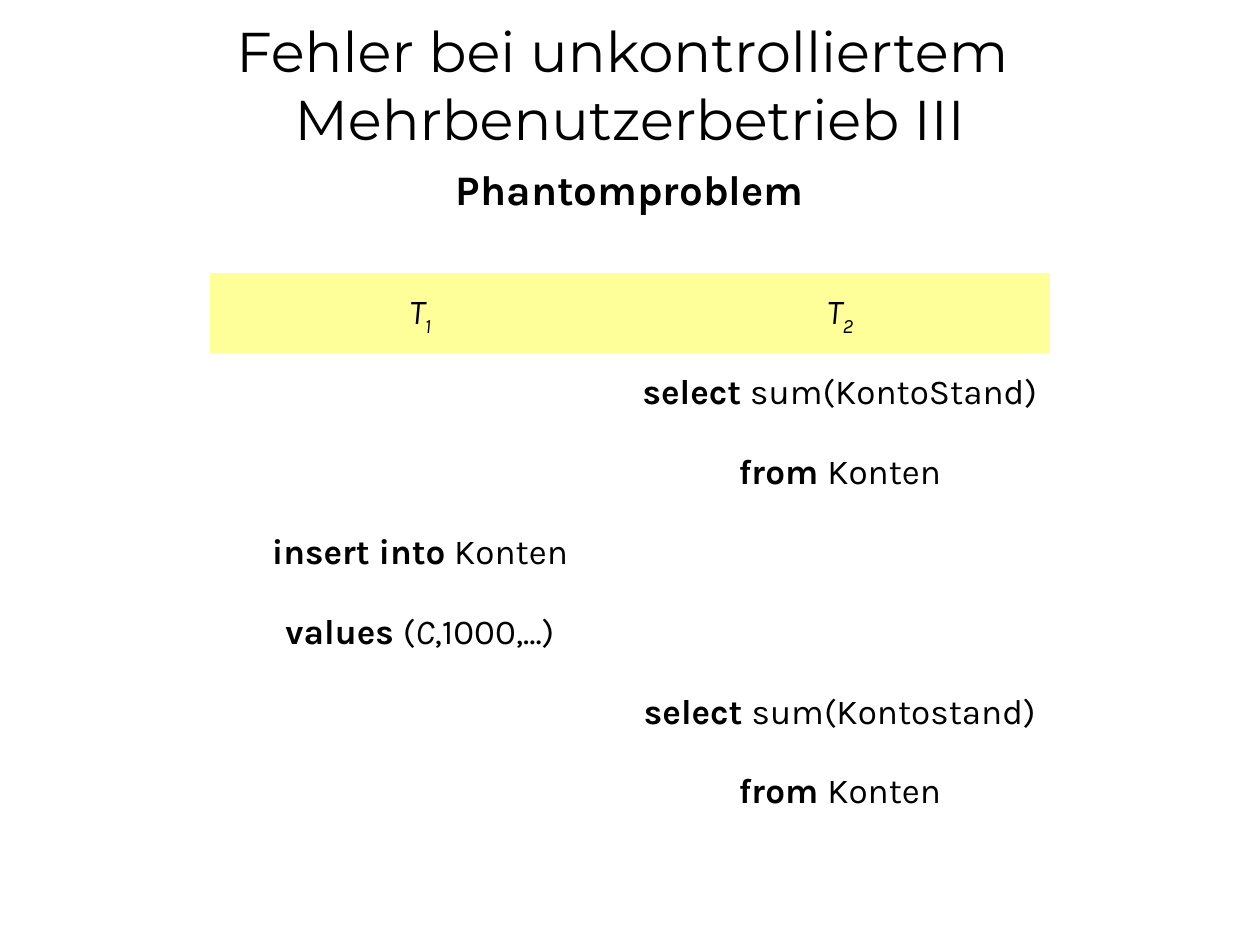
import pptx
import pptx.util
import pptx.dml.color
import pptx.enum.text
import pptx.oxml.ns

WIDE, HIGH = 10, 7.5
TITLE = ["Fehler bei unkontrolliertem ", "Mehrbenutzerbetrieb III"]
HEAD = "Phantomproblem"
# Each cell is a list of (text, style): b bold, i italic, s subscript
ROWS = [
    ([("T", "i"), ("1", "is")], [("T", "i"), ("2", "is")]),
    ([], [("select ", "b"), ("sum(KontoStand)", "")]),
    ([], [("from ", "b"), ("Konten", "")]),
    ([("insert into", "b"), (" Konten", "")], []),
    ([("values ", "b"), ("(", ""), ("C", "i"), (",1000,...)", "")], []),
    ([], [("select ", "b"), ("sum(Kontostand)", "")]),
    ([], [("from ", "b"), ("Konten", "")]),
]
INK, YELLOW = "000000", "FFFF99"
PLAIN = "{2D5ABB26-0587-4C30-8999-92F81FD0307C}"  # table style without grid

inch = pptx.util.Inches
anchor = pptx.enum.text.MSO_ANCHOR


def color(code):
    return pptx.dml.color.RGBColor.from_string(code)


def add_run(para, text, size, style="", font="Karla"):
    run = para.add_run()
    run.text = text
    face = run.font
    face.name, face.size = font, pptx.util.Pt(size)
    face.bold, face.italic = "b" in style, "i" in style
    face.color.rgb = color(INK)
    if "s" in style:
        run._r.get_or_add_rPr().set("baseline", "-25000")


def add_box(slide, top, high, side):
    """Add a centred text box of full width and return its paragraph."""
    frame = slide.shapes.add_textbox(0, inch(top), inch(WIDE), inch(high)).text_frame
    frame.word_wrap = True
    frame.vertical_anchor = side
    para = frame.paragraphs[0]
    para.alignment = pptx.enum.text.PP_ALIGN.CENTER
    return para


deck = pptx.Presentation()
deck.slide_width, deck.slide_height = inch(WIDE), inch(HIGH)
slide = deck.slides.add_slide(deck.slide_layouts[6])

para = add_box(slide, 0, HIGH / 6, anchor.BOTTOM)
for n, line in enumerate(TITLE):
    if n:
        para.add_line_break()
    add_run(para, line, 32, font="Montserrat")
add_run(add_box(slide, HIGH / 6, HIGH / 15, anchor.TOP), HEAD, 24, "b")

table = slide.shapes.add_table(
    len(ROWS), 2, inch(WIDE / 6), inch(2.17), inch(WIDE * 2 / 3), inch(4.44)
).table
table.first_row = table.horz_banding = False
table._tbl.tblPr.find(pptx.oxml.ns.qn("a:tableStyleId")).text = PLAIN
for r, row in enumerate(ROWS):
    for c, runs in enumerate(row):
        cell = table.cell(r, c)
        cell.vertical_anchor = anchor.MIDDLE
        if r == 0:
            cell.fill.solid()
            cell.fill.fore_color.rgb = color(YELLOW)
        else:
            cell.fill.background()
        para = cell.text_frame.paragraphs[0]
        para.alignment = pptx.enum.text.PP_ALIGN.CENTER
        para.line_spacing = 0.9
        for text, style in runs:
            add_run(para, text, 20, style)

deck.save("out.pptx")
